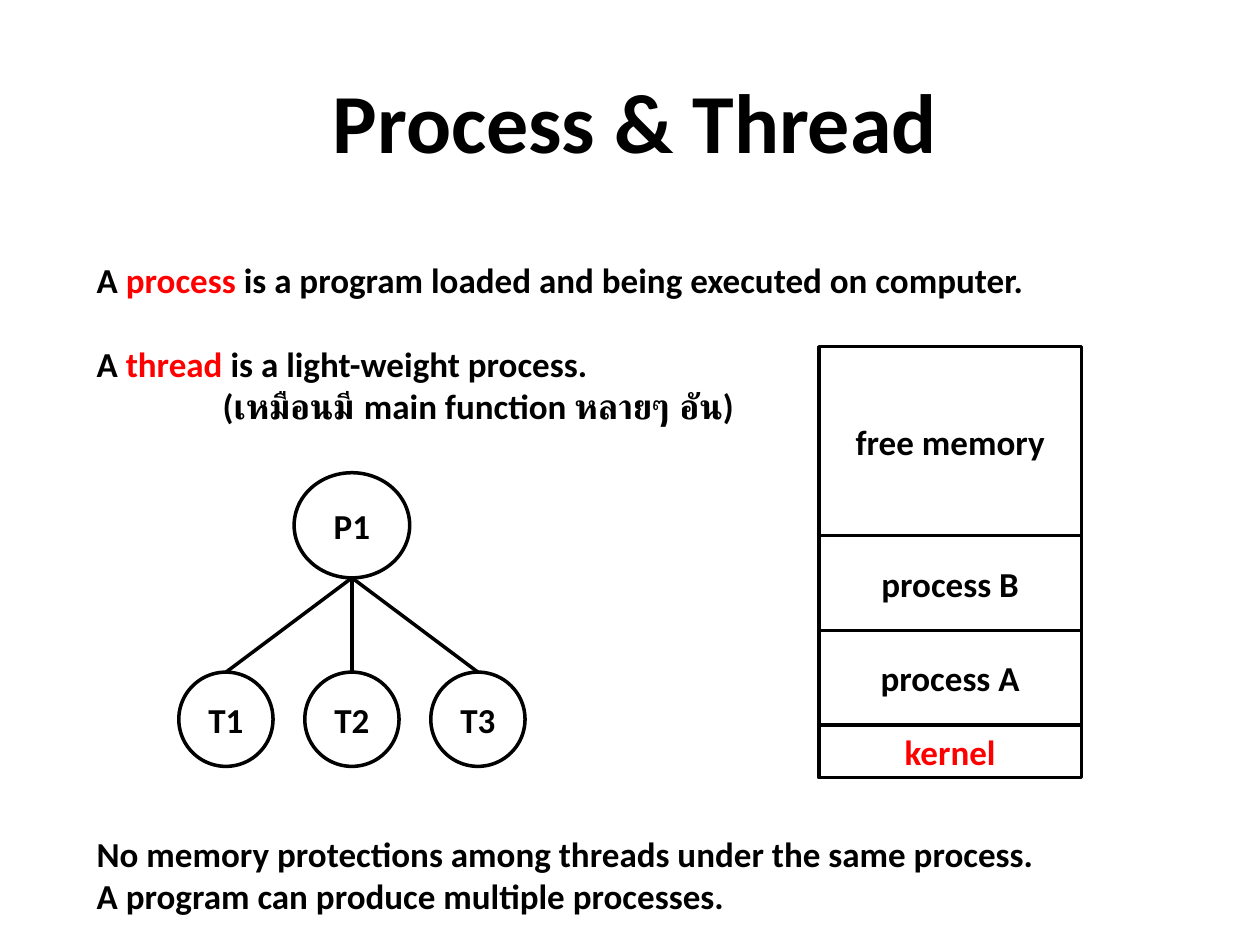
"""Build the Process & Thread slide: definitions, a thread tree and a memory map."""
from typing import NamedTuple

from pptx import Presentation
from pptx.dml.color import RGBColor
from pptx.enum.shapes import MSO_CONNECTOR, MSO_SHAPE
from pptx.enum.text import MSO_ANCHOR, PP_ALIGN
from pptx.oxml.ns import qn
from pptx.util import Cm, Pt
from lxml import etree

BLACK = RGBColor(0x00, 0x00, 0x00)
RED = RGBColor(0xFF, 0x00, 0x00)
OVAL, RECT = MSO_SHAPE.OVAL, MSO_SHAPE.RECTANGLE
STRAIGHT = MSO_CONNECTOR.STRAIGHT
LEFT, CENTER = PP_ALIGN.LEFT, PP_ALIGN.CENTER
MIDDLE = MSO_ANCHOR.MIDDLE
FONT = "Calibri"
LINE_WIDTH = Pt(2)


class Run(NamedTuple):
    text: str
    color: RGBColor = BLACK


class Para(NamedTuple):
    runs: list[Run]
    before: float = 0
    indent: float = 0


class Box(NamedTuple):
    left: float
    top: float
    width: float
    height: float


class Block(NamedTuple):
    label: str
    height: float
    color: RGBColor = BLACK


TITLE = [Para([Run("Process & Thread")])]
DEFINITIONS = [
    Para([Run("A "), Run("process", RED),
          Run(" is a program loaded and being executed on computer.")]),
    Para([Run("A "), Run("thread", RED), Run(" is a light-weight process.")], before=24),
    Para([Run("(เหมือนมี main function หลายๆ อัน)")], indent=2.54),
]
NOTES = [
    Para([Run("No memory protections among threads under the same process.")]),
    Para([Run("A program can produce multiple processes.")]),
]
MEMORY = [
    Block("free memory", 3.81),
    Block("process B", 1.91),
    Block("process A", 1.91),
    Block("kernel", 1.06, RED),
]
MEMORY_LEFT, MEMORY_TOP, MEMORY_WIDTH = 16.51, 6.99, 5.29

THREADS = ["T1", "T2", "T3"]
THREAD_TOP, THREAD_SIZE, THREAD_STEP = 13.55, 1.9, 2.54
PROCESS = Box(5.93, 9.53, 2.33, 2.12)


def fill_text(tf, paras: list[Para], size: float, align) -> None:
    """Write paragraphs run by run into a text frame."""
    for i, para in enumerate(paras):
        p = tf.paragraphs[0] if i == 0 else tf.add_paragraph()
        p.alignment = align
        if para.before:
            p.space_before = Pt(para.before)
        if para.indent:
            p._p.get_or_add_pPr().set("marL", str(Cm(para.indent)))
        for run in para.runs:
            r = p.add_run()
            r.text = run.text
            r.font.name = FONT
            r.font.size = Pt(size)
            r.font.bold = True
            r.font.color.rgb = run.color


def add_text(s, box: Box, paras: list[Para], size: float = 20, align=LEFT) -> None:
    """Add a wrapping text box."""
    tf = s.shapes.add_textbox(*map(Cm, box)).text_frame
    tf.word_wrap = True
    fill_text(tf, paras, size, align)


def add_node(s, kind, box: Box, label: str, color: RGBColor = BLACK) -> None:
    """Add an outlined shape with a centred label."""
    sp = s.shapes.add_shape(kind, *map(Cm, box))
    sp.shadow.inherit = False
    sp.fill.background()
    sp.line.color.rgb = BLACK
    sp.line.width = LINE_WIDTH
    tf = sp.text_frame
    tf.word_wrap = False
    tf.vertical_anchor = MIDDLE
    fill_text(tf, [Para([Run(label, color)])], 20, CENTER)


def add_line(s, x1: float, y1: float, x2: float, y2: float) -> None:
    """Add a plain straight connector."""
    line = s.shapes.add_connector(STRAIGHT, Cm(x1), Cm(y1), Cm(x2), Cm(y2))
    line.line.color.rgb = BLACK
    line.line.width = LINE_WIDTH
    etree.SubElement(line._element.spPr, qn("a:effectLst"))


def add_thread_tree(s) -> None:
    """Draw the process above its threads, joined by lines."""
    center = PROCESS.left + PROCESS.width / 2
    bottom = PROCESS.top + PROCESS.height
    add_node(s, OVAL, PROCESS, "P1")
    for i, label in enumerate(THREADS):
        x = center + (i - (len(THREADS) - 1) / 2) * THREAD_STEP
        box = Box(x - THREAD_SIZE / 2, THREAD_TOP, THREAD_SIZE, THREAD_SIZE)
        add_node(s, OVAL, box, label)
        add_line(s, center, bottom, x, THREAD_TOP)


def add_memory_map(s) -> None:
    """Stack the memory blocks from top to bottom."""
    top = MEMORY_TOP
    for block in MEMORY:
        box = Box(MEMORY_LEFT, top, MEMORY_WIDTH, block.height)
        add_node(s, RECT, box, block.label, block.color)
        top += block.height


def main() -> None:
    """Build and save the slide."""
    prs = Presentation()
    prs.slide_width, prs.slide_height = Cm(25.4), Cm(19.05)
    s = prs.slides.add_slide(prs.slide_layouts[6])
    add_text(s, Box(1.47, 1.27, 22.66, 2.31), TITLE, 48, CENTER)
    add_text(s, Box(1.7, 5.08, 22.23, 3.68), DEFINITIONS)
    add_thread_tree(s)
    add_memory_map(s)
    add_text(s, Box(1.7, 16.66, 22.23, 1.96), NOTES)
    prs.save("out.pptx")


if __name__ == "__main__":
    main()
